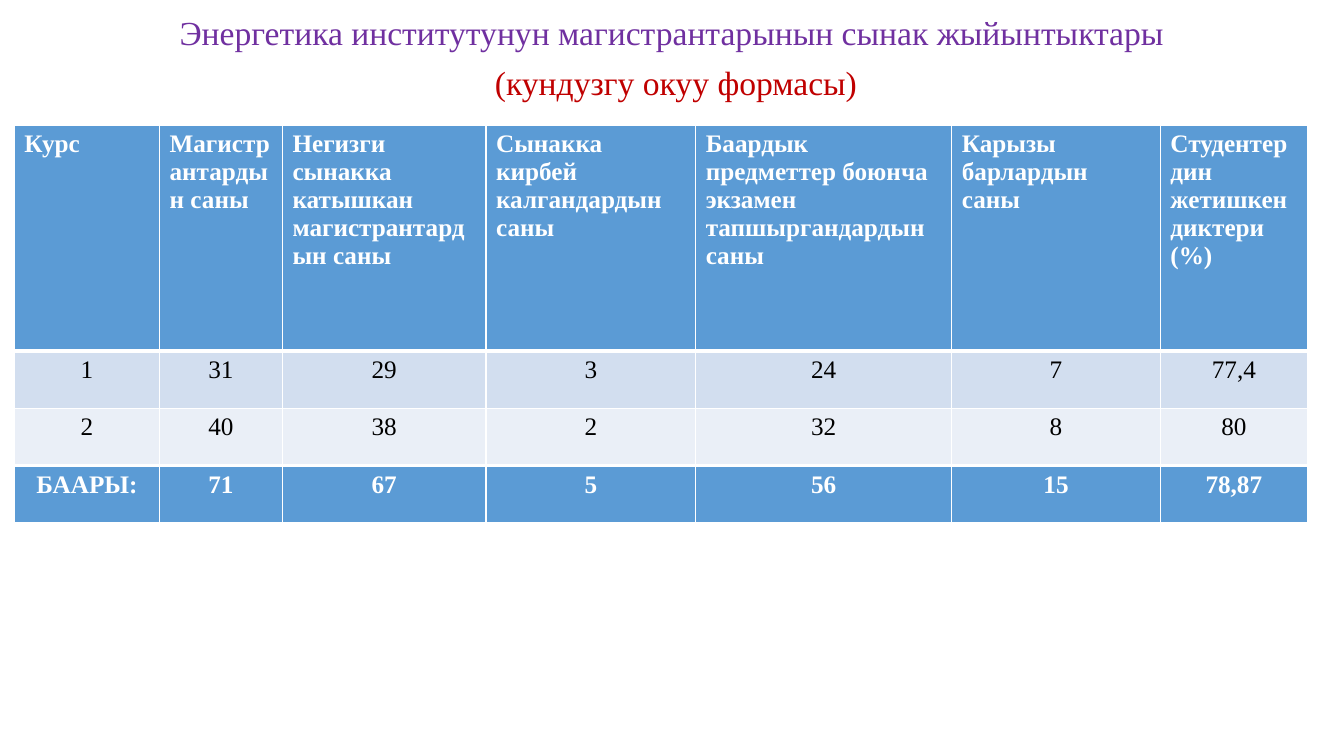
from pptx import Presentation
from pptx.dml.color import RGBColor as RGB
from pptx.enum.text import MSO_ANCHOR as Anchor, MSO_AUTO_SIZE as AutoSize, PP_ALIGN as Align
from pptx.oxml import parse_xml
from pptx.oxml.ns import nsdecls
from pptx.util import Pt

FONT = "Times New Roman"
WHITE = RGB(0xFF, 0xFF, 0xFF)
BLACK = RGB(0, 0, 0)
PURPLE = RGB(0x70, 0x30, 0xA0)
RED = RGB(0xC0, 0, 0)
BLUE = RGB(0x5B, 0x9B, 0xD5)
BAND_DARK = RGB(0xD2, 0xDE, 0xEF)
BAND_LIGHT = RGB(0xEA, 0xEF, 0xF7)

TITLE_LINES = [
    ("Энергетика институтунун магистрантарынын сынак жыйынтыктары ", PURPLE),
    ("(кундузгу окуу формасы)", RED),
]
RESULTS = [
    ["Курс", "Магистрантардын саны", "Негизги сынакка катышкан магистрантардын саны",
     "Сынакка кирбей калгандардын саны",
     "Баардык предметтер боюнча экзамен тапшыргандардын саны",
     "Карызы барлардын саны", "Студентердин жетишкендиктери (%)"],
    ["1", "31", "29", "3", "24", "7", "77,4"],
    ["2", "40", "38", "2", "32", "8", "80"],
    ["БААРЫ:", "71", "67", "5", "56", "15", "78,87"],
]
COL_WIDTHS = [103.7, 87.8, 145.4, 149.8, 182.9, 149, 105.1]
ROW_HEIGHTS = [161.3, 41, 41, 41]
ROW_FILLS = [BLUE, BAND_DARK, BAND_LIGHT, BLUE]


class SlideBuilder:
    def __init__(self, prs, font):
        self.font = font
        self.s = prs.slides.add_slide(prs.slide_layouts[5])

    def format_text(self, p, size, color, bold, align):
        p.alignment = align
        for r in p.runs:
            r.font.name = self.font
            r.font.size = Pt(size)
            r.font.bold = bold
            r.font.color.rgb = color

    def title(self, lines, left, top, width, height):
        sp = self.s.shapes.title
        sp.left, sp.top, sp.width, sp.height = Pt(left), Pt(top), Pt(width), Pt(height)
        tf = sp.text_frame
        tf.word_wrap = True
        tf.auto_size = AutoSize.NONE
        tf.vertical_anchor = Anchor.TOP
        tf.text = "\n".join(text for text, _ in lines)
        for p, (_, color) in zip(tf.paragraphs, lines):
            p.line_spacing = 0.9
            p.space_before = Pt(10)
            self.format_text(p, 24, color, False, Align.CENTER)

    def borders(self, cell, top, bottom):
        tcPr = cell._tc.get_or_add_tcPr()
        for side, width in (("L", 1), ("R", 1), ("T", top), ("B", bottom)):
            tcPr.append(parse_xml(
                f'<a:ln{side} {nsdecls("a")} w="{Pt(width)}"><a:solidFill>'
                f'<a:srgbClr val="{WHITE}"/></a:solidFill></a:ln{side}>'))

    def table(self, rows, left, top, widths, heights, fills):
        tbl = self.s.shapes.add_table(len(rows), len(widths), Pt(left), Pt(top),
                                      Pt(sum(widths)), Pt(sum(heights))).table
        for col, width in zip(tbl.columns, widths):
            col.width = Pt(width)
        last = len(rows) - 1
        for i, texts in enumerate(rows):
            tbl.rows[i].height = Pt(heights[i])
            strong = i in (0, last)
            for j, text in enumerate(texts):
                cell = tbl.cell(i, j)
                # Thick rules below the header and above the total
                self.borders(cell, 3 if i in (1, last) else 1, 3 if i in (0, last - 1) else 1)
                cell.fill.solid()
                cell.fill.fore_color.rgb = fills[i]
                cell.text_frame.text = text
                self.format_text(cell.text_frame.paragraphs[0], 18,
                                 WHITE if strong else BLACK, strong,
                                 Align.LEFT if i == 0 else Align.CENTER)


def main():
    prs = Presentation()
    prs.slide_width, prs.slide_height = Pt(960), Pt(540)
    slide = SlideBuilder(prs, FONT)

    # Heading
    slide.title(TITLE_LINES, 31, 8, 903.6, 81.4)

    # Exam results
    slide.table(RESULTS, 10.3, 89.3, COL_WIDTHS, ROW_HEIGHTS, ROW_FILLS)

    prs.save("out.pptx")


if __name__ == "__main__":
    main()
